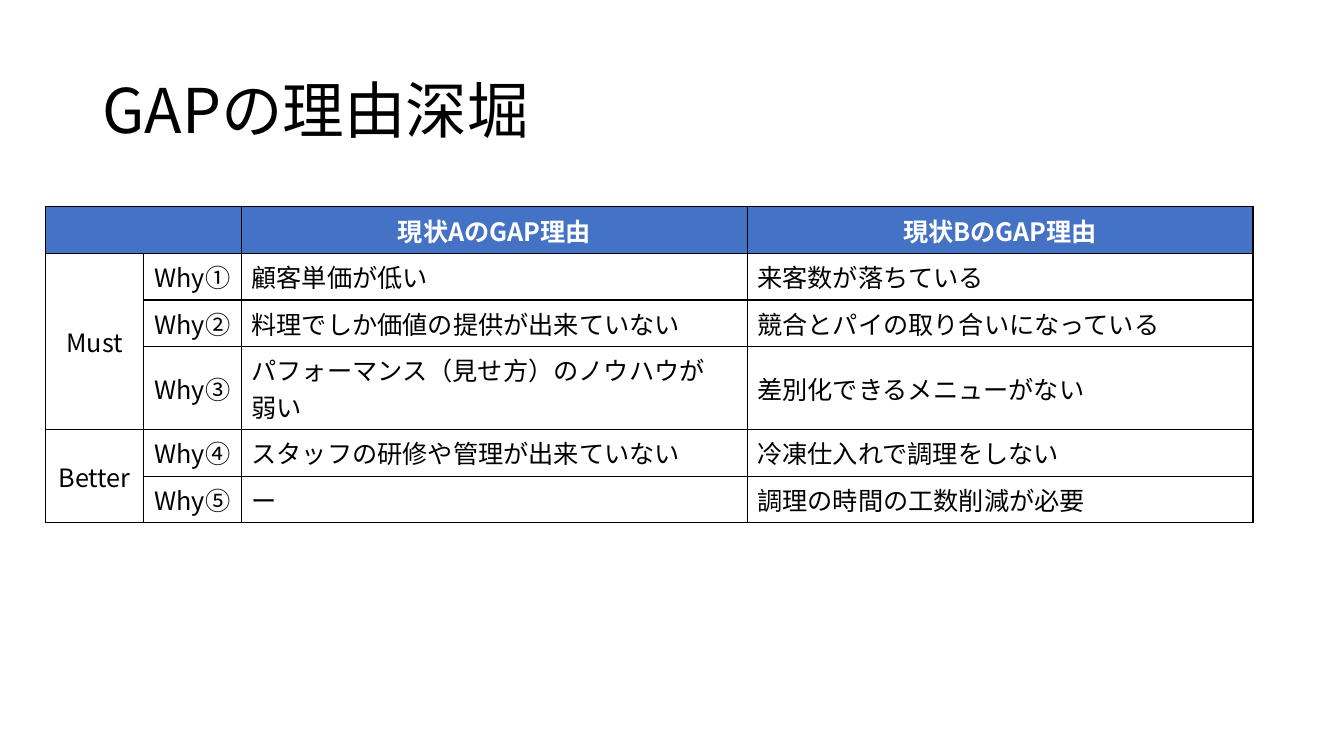
"""Build the slide that digs into the reasons behind the gaps."""
from lxml import etree
from pptx import Presentation
from pptx.dml.color import RGBColor
from pptx.enum.text import MSO_ANCHOR, MSO_AUTO_SIZE, PP_ALIGN
from pptx.oxml import parse_xml
from pptx.oxml.ns import nsdecls, qn
from pptx.util import Pt

FONT = "Noto Sans CJK JP"
BLACK = RGBColor(0x00, 0x00, 0x00)
WHITE = RGBColor(0xFF, 0xFF, 0xFF)
BLUE = RGBColor(0x44, 0x72, 0xC4)

ROWS = [
    ["", "", "現状AのGAP理由", "現状BのGAP理由"],
    ["Must", "Why①", "顧客単価が低い", "来客数が落ちている"],
    ["", "Why②", "料理でしか価値の提供が出来ていない", "競合とパイの取り合いになっている"],
    ["", "Why③", "パフォーマンス（見せ方）のノウハウが\n弱い", "差別化できるメニューがない"],
    ["Better", "Why④", "スタッフの研修や管理が出来ていない", "冷凍仕入れで調理をしない"],
    ["", "Why⑤", "ー", "調理の時間の工数削減が必要"],
]
COL_WIDTHS = [70, 70, 361.25, 361.25]
ROW_HEIGHT = 29.5


def add_run(p, text, size, color, bold=False):
    r = p.add_run()
    r.text = text
    r.font.size = Pt(size)
    r.font.bold = bold
    r.font.color.rgb = color
    r.font.name = FONT
    etree.SubElement(r.font._element, qn("a:ea")).set("typeface", FONT)


def set_borders(cell):
    tcPr = cell._tc.get_or_add_tcPr()
    for i, side in enumerate(["lnL", "lnR", "lnT", "lnB"]):
        tcPr.insert(i, parse_xml(
            f'<a:{side} {nsdecls("a")} w="{Pt(1)}"><a:solidFill>'
            f'<a:srgbClr val="{BLACK}"/></a:solidFill></a:{side}>'))


prs = Presentation()
prs.slide_width, prs.slide_height = Pt(960), Pt(540)
s = prs.slides.add_slide(prs.slide_layouts[5])

title = s.shapes.title
title.left, title.top, title.width, title.height = Pt(66), Pt(28.75), Pt(828), Pt(104.4)
tf = title.text_frame
tf.auto_size = MSO_AUTO_SIZE.NONE
tf.vertical_anchor = MSO_ANCHOR.MIDDLE
p = tf.paragraphs[0]
p.alignment = PP_ALIGN.LEFT
p.line_spacing = 0.9
add_run(p, "GAPの理由深堀", 44, BLACK)

table = s.shapes.add_table(len(ROWS), len(COL_WIDTHS), Pt(32.5), Pt(147.75),
                           Pt(sum(COL_WIDTHS)), Pt(ROW_HEIGHT * len(ROWS))).table
table.horz_banding = False
for col, width in zip(table.columns, COL_WIDTHS):
    col.width = Pt(width)
for row in table.rows:
    row.height = Pt(ROW_HEIGHT)

for i, texts in enumerate(ROWS):
    header = i == 0
    for j, text in enumerate(texts):
        cell = table.cell(i, j)
        cell.fill.solid()
        cell.fill.fore_color.rgb = BLUE if header else WHITE
        cell.vertical_anchor = MSO_ANCHOR.TOP if header else MSO_ANCHOR.MIDDLE
        set_borders(cell)
        if not text:
            continue
        tf = cell.text_frame
        for n, line in enumerate(text.split("\n")):
            p = tf.add_paragraph() if n else tf.paragraphs[0]
            p.alignment = PP_ALIGN.CENTER if header or j < 2 else PP_ALIGN.LEFT
            add_run(p, line, 18, WHITE if header else BLACK, header)

for first, last in [((0, 0), (0, 1)), ((1, 0), (3, 0)), ((4, 0), (5, 0))]:
    table.cell(*first).merge(table.cell(*last))

prs.save("out.pptx")
